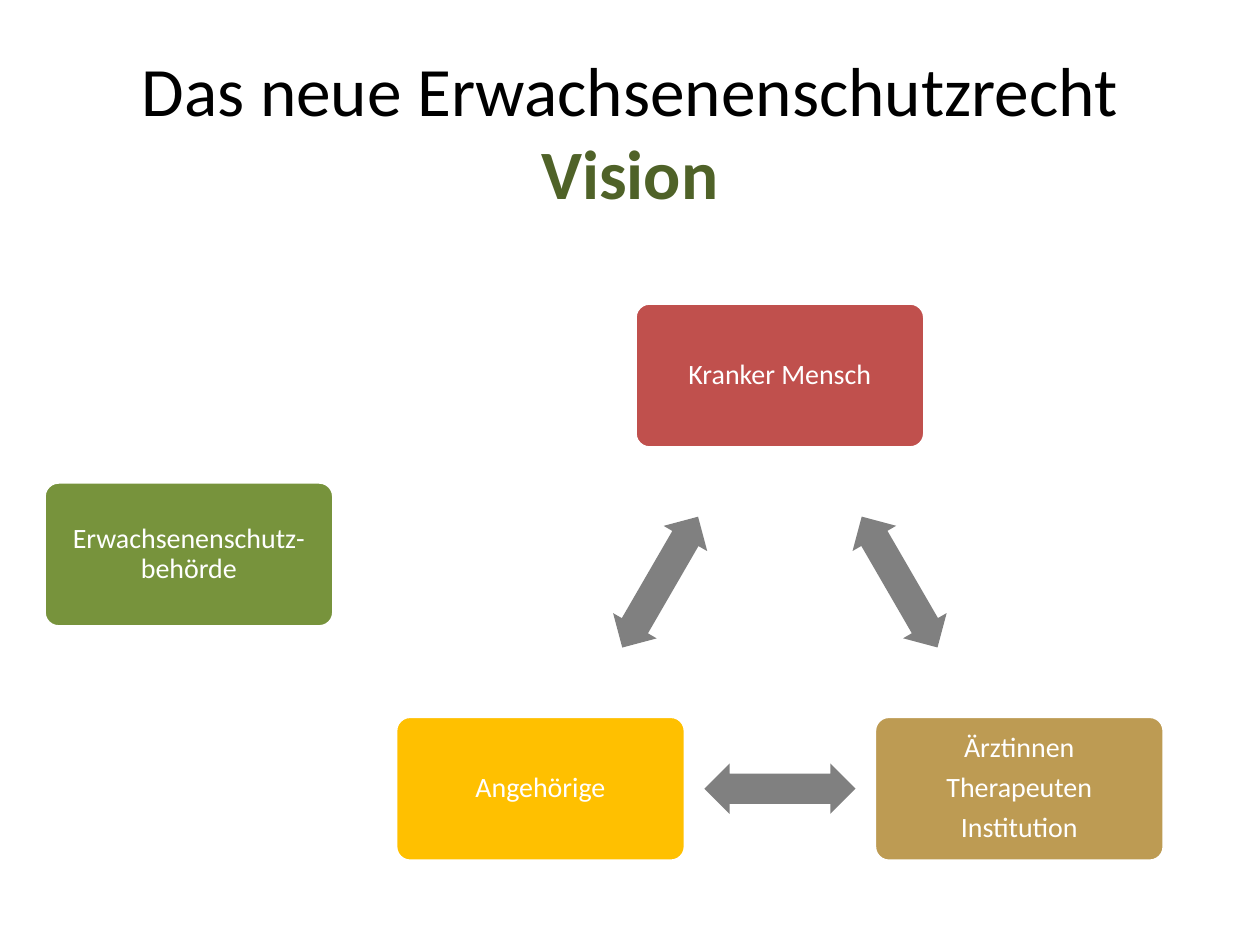
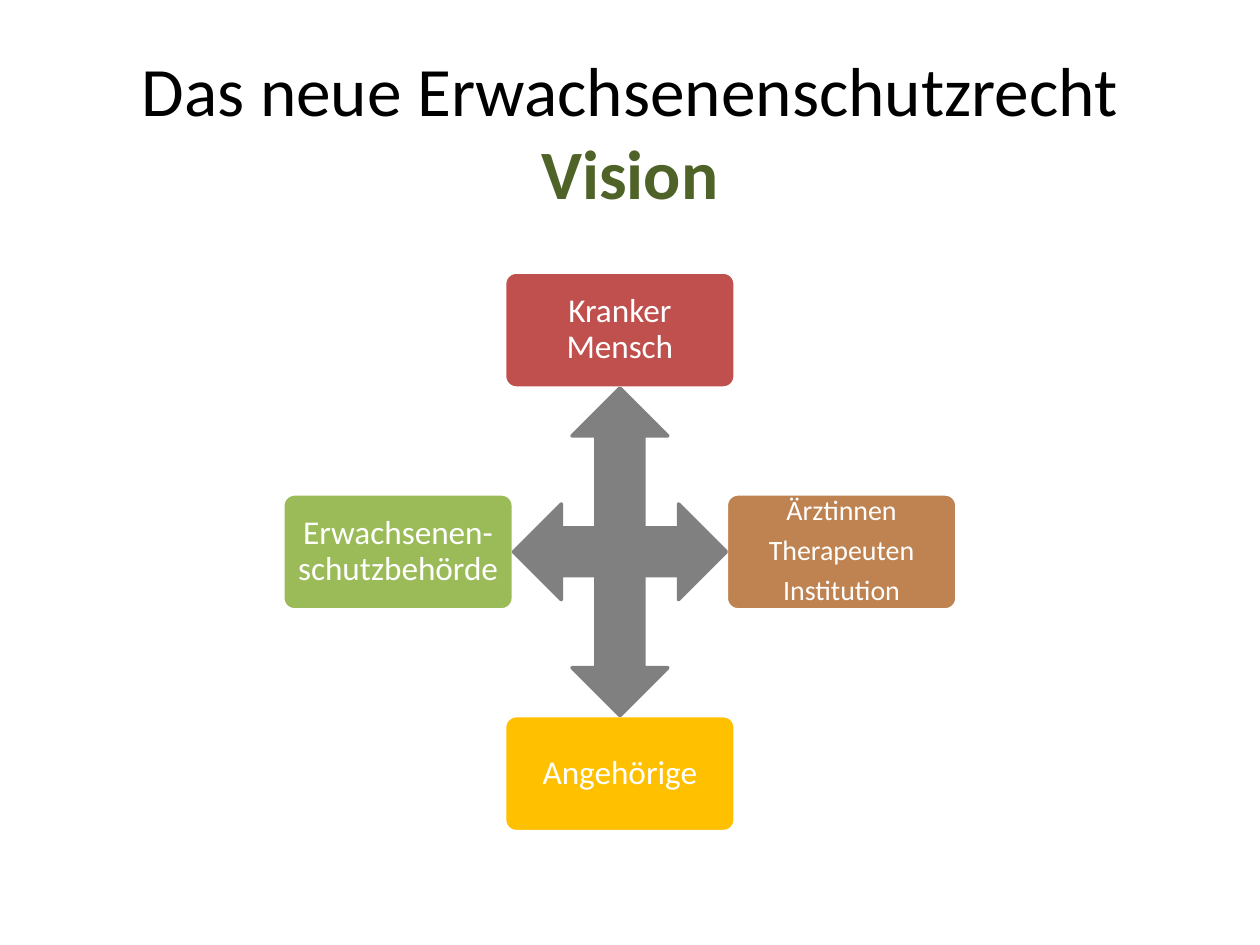
"""Build two slides on the vision of the new adult protection law."""
from dataclasses import dataclass
from itertools import combinations
from math import atan2, degrees
from typing import Any

from pptx import Presentation
from pptx.dml.color import RGBColor
from pptx.enum.shapes import MSO_SHAPE as Preset
from pptx.enum.text import MSO_ANCHOR as Anchor, MSO_AUTO_SIZE as AutoSize, PP_ALIGN as Align
from pptx.util import Inches, Pt


@dataclass(frozen=True)
class Theme:
    """Colours, font and type sizes."""
    font: str = "Calibri"
    title_size: float = 39.6
    large: float = 19
    small: float = 16
    black: str = "000000"
    white: str = "FFFFFF"
    accent: str = "4F6228"
    arrow: str = "808080"
    patient: str = "C0504D"
    family: str = "FFC000"
    care: str = "BD9B53"
    care_cross: str = "BE8351"
    authority: str = "77933C"
    authority_cross: str = "9BBB59"


@dataclass(frozen=True)
class BoxStyle:
    """Size and text inset of the boxes on one slide, in inches."""
    width: float
    height: float
    inset: float


@dataclass(frozen=True)
class Party:
    """A labelled box, placed by its centre in inches."""
    lines: tuple[str, ...]
    x: float
    y: float
    colour: str
    size: float


THEME = Theme()
TRIANGLE_BOX = BoxStyle(2.3, 1.15, 0.07)
CROSS_BOX = BoxStyle(1.83, 0.92, 0.08)
CARE_LINES = ("Ärztinnen", "Therapeuten", "Institution")


def apply(target: Any, values: dict[str, Any]) -> None:
    """Set every named attribute on the target."""
    for name, value in values.items():
        setattr(target, name, value)


def style_font(span: Any, size: float, colour: str, bold: bool = False) -> None:
    """Format one run of text."""
    apply(span.font, {"name": THEME.font, "size": Pt(size), "bold": bold})
    span.font.color.rgb = RGBColor.from_string(colour)


def add_preset(page: Any, preset: Preset, x: float, y: float, width: float,
               height: float, fill: str, line: str | None = None) -> Any:
    """Add a flat preset shape around a centre point."""
    shape = page.shapes.add_shape(preset, Inches(x - width / 2), Inches(y - height / 2),
                                  Inches(width), Inches(height))
    shape.shadow.inherit = False
    shape.fill.solid()
    shape.fill.fore_color.rgb = RGBColor.from_string(fill)
    if line:
        shape.line.color.rgb = RGBColor.from_string(line)
        shape.line.width = Pt(2)
    else:
        shape.line.fill.background()
    return shape


def add_party(page: Any, party: Party, style: BoxStyle) -> None:
    """Draw a rounded box with centred lines of text."""
    box = add_preset(page, Preset.ROUNDED_RECTANGLE, party.x, party.y,
                     style.width, style.height, party.colour, THEME.white)
    box.adjustments[0] = 0.1
    frame = box.text_frame
    sides = ("left", "top", "right", "bottom")
    apply(frame, {f"margin_{side}": Inches(style.inset) for side in sides})
    apply(frame, {"word_wrap": True, "vertical_anchor": Anchor.MIDDLE})
    for index, line in enumerate(party.lines):
        para = frame.add_paragraph() if index else frame.paragraphs[0]
        apply(para, {"alignment": Align.CENTER, "line_spacing": 0.9,
                     "space_after": Pt(0.35 * party.size)})
        span = para.add_run()
        span.text = line
        style_font(span, party.size, THEME.white)


def add_link(page: Any, start: Party, end: Party) -> None:
    """Draw a double arrow midway between two boxes."""
    arrow = add_preset(page, Preset.LEFT_RIGHT_ARROW, (start.x + end.x) / 2,
                       (start.y + end.y) / 2, 1.2, 0.4, THEME.arrow)
    arrow.adjustments[0] = 0.6
    arrow.rotation = degrees(atan2(end.y - start.y, end.x - start.x)) % 360


def add_page(deck: Any) -> Any:
    """Add a slide with the shared two-line title."""
    page = deck.slides.add_slide(deck.slide_layouts[5])
    title = page.shapes.title
    apply(title, {"left": Inches(0.5), "top": Inches(0.41),
                  "width": Inches(9), "height": Inches(1.25)})
    apply(title.text_frame, {"auto_size": AutoSize.NONE, "word_wrap": True,
                             "vertical_anchor": Anchor.MIDDLE})
    para = title.text_frame.paragraphs[0]
    para.alignment = Align.CENTER
    topic = para.add_run()
    topic.text = "Das neue Erwachsenenschutzrecht"
    style_font(topic, THEME.title_size, THEME.black)
    para.add_line_break()
    heading = para.add_run()
    heading.text = "Vision"
    style_font(heading, THEME.title_size, THEME.accent, bold=True)
    return page


def build_triangle(deck: Any) -> None:
    """Show three linked parties with the authority apart."""
    page = add_page(deck)
    x, reach, top, bottom = 6.19, 1.9, 2.98, 6.26
    linked = (
        Party(("Angehörige",), x - reach, bottom, THEME.family, THEME.small),
        Party(("Kranker Mensch",), x, top, THEME.patient, THEME.small),
        Party(CARE_LINES, x + reach, bottom, THEME.care, THEME.small),
    )
    authority = Party(("Erwachsenenschutz-behörde",), 1.5, 4.4, THEME.authority, THEME.small)
    for party in (*linked, authority):
        add_party(page, party, TRIANGLE_BOX)
    for start, end in combinations(linked, 2):
        add_link(page, start, end)


def build_cross(deck: Any) -> None:
    """Show four parties joined by a four-way arrow."""
    page = add_page(deck)
    x, y, reach = 4.92, 4.38, 1.76
    parties = (
        Party(("Kranker Mensch",), x, y - reach, THEME.patient, THEME.large),
        Party(CARE_LINES, x + reach, y, THEME.care_cross, THEME.small),
        Party(("Angehörige",), x, y + reach, THEME.family, THEME.large),
        Party(("Erwachsenen-schutzbehörde",), x - reach, y,
              THEME.authority_cross, THEME.large),
    )
    for party in parties:
        add_party(page, party, CROSS_BOX)
    add_preset(page, Preset.QUAD_ARROW, x, y, 2 * reach - CROSS_BOX.width,
               2 * reach - CROSS_BOX.height, THEME.arrow, THEME.arrow)


def main() -> None:
    """Build and save the deck."""
    deck = Presentation()
    apply(deck, {"slide_width": Inches(10), "slide_height": Inches(7.5)})
    build_triangle(deck)
    build_cross(deck)
    deck.save("out.pptx")


if __name__ == "__main__":
    main()
